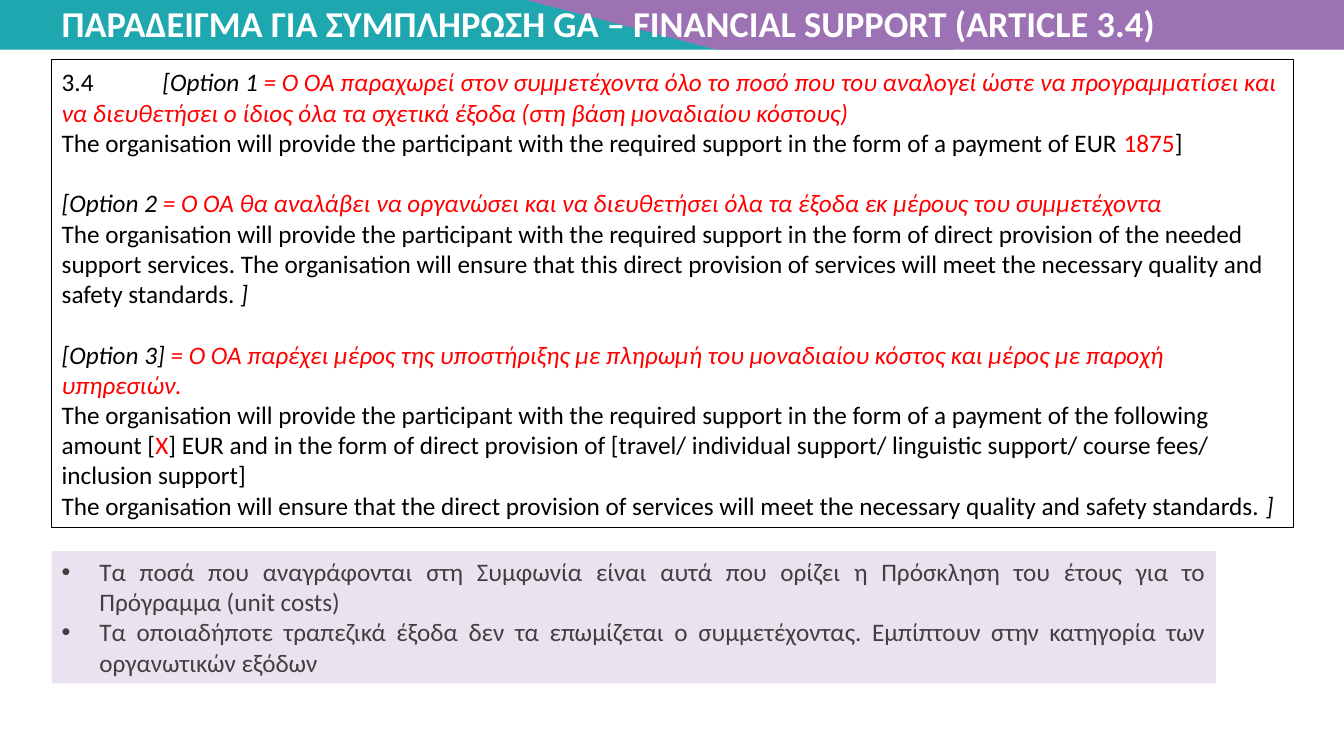
from dataclasses import dataclass

from lxml.etree import SubElement
from pptx import Presentation
from pptx.dml.color import RGBColor as RGB
from pptx.enum.shapes import MSO_SHAPE as SHAPE
from pptx.enum.text import MSO_ANCHOR as ANCHOR, MSO_AUTO_SIZE as FIT, PP_ALIGN as ALIGN
from pptx.oxml.ns import qn
from pptx.util import Cm, Pt


@dataclass(frozen=True)
class Theme:
    font: str = "Calibri"
    teal: RGB = RGB(0x1E, 0xA7, 0xAE)
    purple: RGB = RGB(0x9D, 0x72, 0xB5)
    white: RGB = RGB(0xFF, 0xFF, 0xFF)
    black: RGB = RGB(0, 0, 0)
    red: RGB = RGB(0xFF, 0, 0)
    grey: RGB = RGB(0x40, 0x40, 0x40)
    title_size: Pt = Pt(26)
    body_size: Pt = Pt(18)
    option_gap: Pt = Pt(21.6)


T = Theme()
LEFT, BAND_TOP, BAND_HEIGHT = 1.3, -0.1, 1.35

TITLE = "ΠΑΡΑΔΕΙΓΜΑ ΓΙΑ ΣΥΜΠΛΗΡΩΣΗ GA – FINANCIAL SUPPORT (ARTICLE 3.4)"

# Run styles: (colour, italic)
PLAIN, ITALIC = (T.black, False), (T.black, True)
VALUE, REMARK = (T.red, False), (T.red, True)

PROVIDE = "The organisation will provide the participant with the required support in the form of "
ENSURE = "The organisation will ensure that "
QUALITY = " provision of services will meet the necessary quality and safety standards. "

# Each option is a list of paragraphs, each paragraph a list of runs
OPTIONS = [
    [
        [("3.4\t", PLAIN), ("[Option 1 ", ITALIC),
         ("= Ο ΟΑ παραχωρεί στον συμμετέχοντα όλο το ποσό που του αναλογεί ώστε να "
          "προγραμματίσει και να διευθετήσει ο ίδιος όλα τα σχετικά έξοδα "
          "(στη βάση μοναδιαίου κόστους)", REMARK)],
        [(PROVIDE + "a payment of EUR ", PLAIN), ("1875", VALUE), ("]", PLAIN)],
    ],
    [
        [("[Option 2 ", ITALIC),
         ("= Ο ΟΑ θα αναλάβει να οργανώσει και να διευθετήσει όλα τα έξοδα "
          "εκ μέρους του συμμετέχοντα", REMARK)],
        [(PROVIDE + "direct provision of the needed support services. "
          + ENSURE + "this direct" + QUALITY, PLAIN), ("]", ITALIC)],
    ],
    [
        [("[Option 3] ", ITALIC),
         ("= Ο ΟΑ παρέχει μέρος της υποστήριξης με πληρωμή του μοναδιαίου κόστος "
          "και μέρος με παροχή υπηρεσιών.", REMARK)],
        [(PROVIDE + "a payment of the following amount [", PLAIN), ("Χ", VALUE),
         ("] EUR and in the form of direct provision of [travel/ individual support/ "
          "linguistic support/ course fees/ inclusion support]", PLAIN)],
        [(ENSURE + "the direct" + QUALITY, PLAIN), ("]", ITALIC)],
    ],
]

NOTES = [
    "Τα ποσά που αναγράφονται στη Συμφωνία είναι αυτά που ορίζει η Πρόσκληση του έτους "
    "για το Πρόγραμμα (unit costs)",
    "Τα οποιαδήποτε τραπεζικά έξοδα δεν τα επωμίζεται ο συμμετέχοντας. Εμπίπτουν στην "
    "κατηγορία των οργανωτικών εξόδων",
]


def add_band(slide, kind, left, width, color, rotation=0):
    sp = slide.shapes.add_shape(kind, Cm(left), Cm(BAND_TOP), Cm(width), Cm(BAND_HEIGHT))
    sp.rotation = rotation
    sp.shadow.inherit = False
    sp.fill.solid()
    sp.fill.fore_color.rgb = color
    sp.line.fill.background()
    return sp


def place(sp, left, top, width, height, anchor=ANCHOR.TOP):
    """Move a placeholder and return its text frame."""
    sp.left, sp.top, sp.width, sp.height = Cm(left), Cm(top), Cm(width), Cm(height)
    tf = sp.text_frame
    tf.word_wrap = True
    tf.auto_size = FIT.NONE
    tf.vertical_anchor = anchor
    return tf


def add_paragraph(tf, first, align=ALIGN.LEFT, before=Pt(0)):
    p = tf.paragraphs[0] if first else tf.add_paragraph()
    p.alignment = align
    p.space_before = before
    return p


def add_run(p, text, color, size=T.body_size, italic=False, bold=False):
    r = p.add_run()
    r.text = text
    r.font.name, r.font.size = T.font, size
    r.font.color.rgb = color
    r.font.italic, r.font.bold = italic, bold


def set_indent(p, hanging=0, bullet=None):
    pPr = p._p.get_or_add_pPr()
    pPr.set("marL", str(Cm(hanging)))
    pPr.set("indent", str(-Cm(hanging)))
    pPr.set("defTabSz", str(Cm(2.54)))
    if bullet:
        SubElement(pPr, qn("a:buFont")).set("typeface", "Arial")
        SubElement(pPr, qn("a:buChar")).set("char", bullet)
    else:
        SubElement(pPr, qn("a:buNone"))


def fill_title(sp):
    tf = place(sp, LEFT, BAND_TOP, 28.6, 1.37)
    add_run(add_paragraph(tf, True), TITLE, T.white, T.title_size, bold=True)


def fill_options(sp):
    tf = place(sp, LEFT, 1.5, 31.29, 11.79, ANCHOR.MIDDLE)
    sp.line.color.rgb = T.black
    sp.line.width = Pt(0.75)
    for i, option in enumerate(OPTIONS):
        for j, runs in enumerate(option):
            gap = T.option_gap if i and not j else Pt(0)
            p = add_paragraph(tf, i == j == 0, before=gap)
            set_indent(p)
            for text, (color, italic) in runs:
                add_run(p, text, color, italic=italic)


def fill_notes(sp):
    tf = place(sp, LEFT, 13.89, 29.34, 3.33)
    sp.fill.solid()
    sp.fill.fore_color.rgb = T.purple
    color = sp.fill._xPr.find(qn("a:solidFill"))[0]
    SubElement(color, qn("a:alpha")).set("val", "20000")
    for i, note in enumerate(NOTES):
        p = add_paragraph(tf, i == 0, ALIGN.JUSTIFY)
        set_indent(p, 0.95, "•")
        add_run(p, note, T.grey)


def main():
    prs = Presentation()
    prs.slide_width, prs.slide_height = Cm(33.87), Cm(19.05)
    slide = prs.slides.add_slide(prs.slide_layouts[3])
    title, options, notes = slide.placeholders

    # Header band
    add_band(slide, SHAPE.RECTANGLE, 0, 24.05, T.teal)
    add_band(slide, SHAPE.RECTANGLE, 18.08, 15.79, T.purple, 180)
    slant = add_band(slide, SHAPE.ISOSCELES_TRIANGLE, 12.88, 10.16, T.purple, 180)
    slant.adjustments[0] = 0.49

    # Text, brought in front of the band in reading order
    for sp, fill in ((title, fill_title), (options, fill_options), (notes, fill_notes)):
        fill(sp)
        slide.shapes._spTree.append(sp._element)

    prs.save("out.pptx")


if __name__ == "__main__":
    main()
